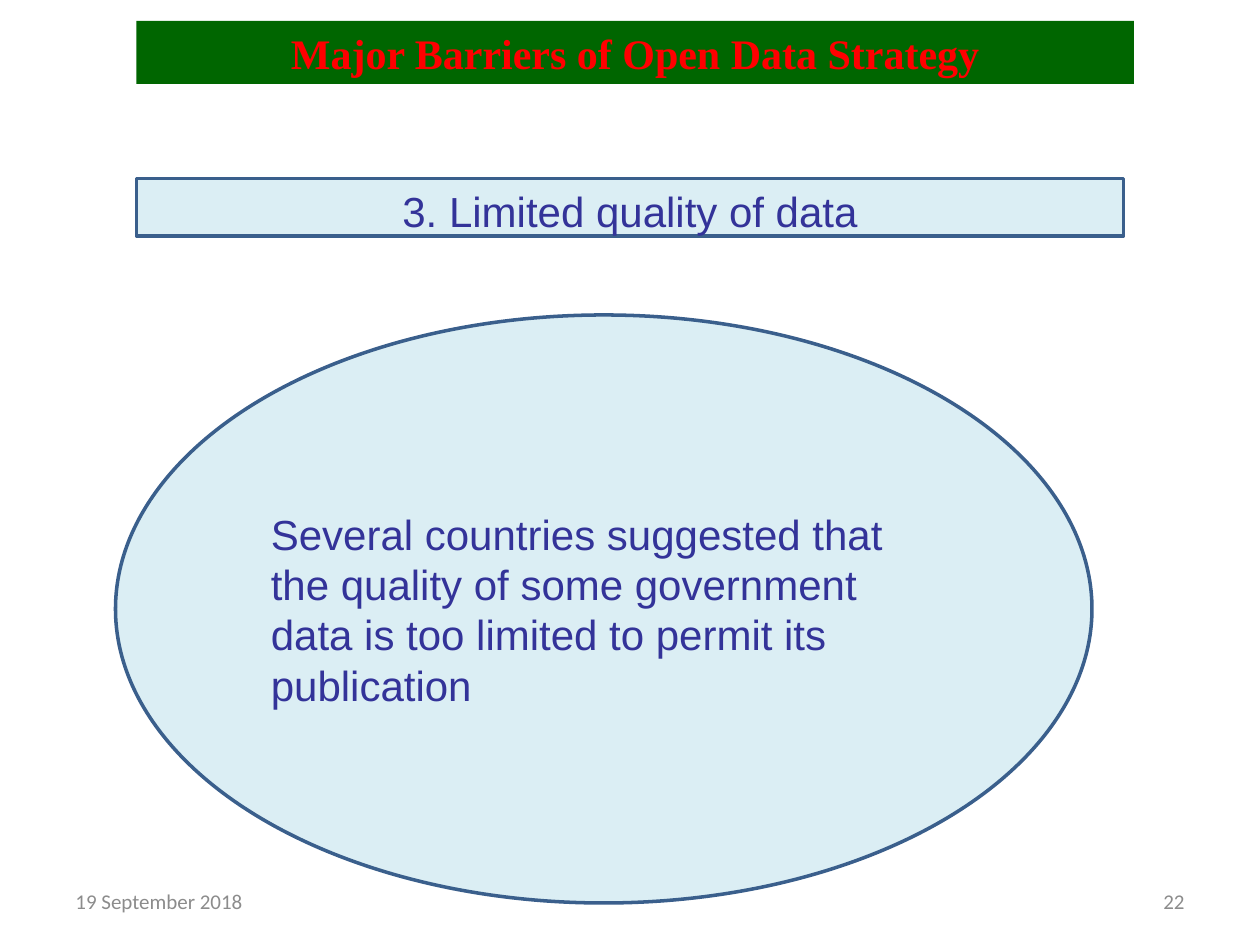
"""Build a slide on limited data quality as a barrier to open data."""
from pptx import Presentation
from pptx.dml.color import RGBColor
from pptx.enum.shapes import MSO_SHAPE as Shape
from pptx.enum.text import MSO_ANCHOR as Anchor, PP_ALIGN as Align
from pptx.util import Pt

TITLE = {"size": Pt(24), "name": "Times New Roman", "bold": True}
BODY = {"size": Pt(24), "name": "Arial"}
FOOTER = {"size": Pt(12), "name": "Calibri"}
SPACED = {"alignment": Align.CENTER, "line_spacing": 1.15, "space_after": Pt(10)}
LEFT = {"alignment": Align.LEFT}

ITEMS = [
    ("Major Barriers of Open Data Strategy", Shape.RECTANGLE, (78, 12, 570, 36),
     "006600", None, TITLE, "FF0000", {"alignment": Align.CENTER}),
    ("19 September 2018", None, (36, 500.5, 168, 28.75),
     None, None, FOOTER, "8C8C8C", LEFT),
    ("22", None, (516, 500.5, 168, 28.75),
     None, None, FOOTER, "8C8C8C", {"alignment": Align.RIGHT}),
    ("Several countries suggested that the quality of some government data "
     "is too limited to permit its publication", Shape.OVAL, (66, 180, 558, 336),
     "DBEEF4", "3A5F8C", BODY, "333399", LEFT),
    ("3. Limited quality of data", Shape.RECTANGLE, (78, 102, 564, 33),
     "DBEEF4", "3A5F8C", BODY, "333399", SPACED),
]


def color(value):
    return RGBColor.from_string(value)


def apply(target, values):
    for name, value in values.items():
        setattr(target, name, value)


def style_shape(shape, fill, line):
    shape.shadow.inherit = False
    shape.fill.solid()
    shape.fill.fore_color.rgb = color(fill)
    if line:
        shape.line.color.rgb = color(line)
        shape.line.width = Pt(2)
    else:
        shape.line.fill.background()


def add_item(slide, text, kind, box, fill, line, font, ink, layout):
    position = [Pt(length) for length in box]
    if kind is None:
        shape = slide.shapes.add_textbox(*position)
    else:
        shape = slide.shapes.add_shape(kind, *position)
        style_shape(shape, fill, line)
    frame = shape.text_frame
    apply(frame, {"word_wrap": True, "vertical_anchor": Anchor.MIDDLE})
    paragraph = frame.paragraphs[0]
    apply(paragraph, layout)
    run = paragraph.add_run()
    run.text = text
    apply(run.font, font)
    run.font.color.rgb = color(ink)


def main():
    presentation = Presentation()
    apply(presentation, {"slide_width": Pt(720), "slide_height": Pt(540)})
    slide = presentation.slides.add_slide(presentation.slide_layouts[6])
    for item in ITEMS:
        add_item(slide, *item)
    presentation.save("out.pptx")


if __name__ == "__main__":
    main()
